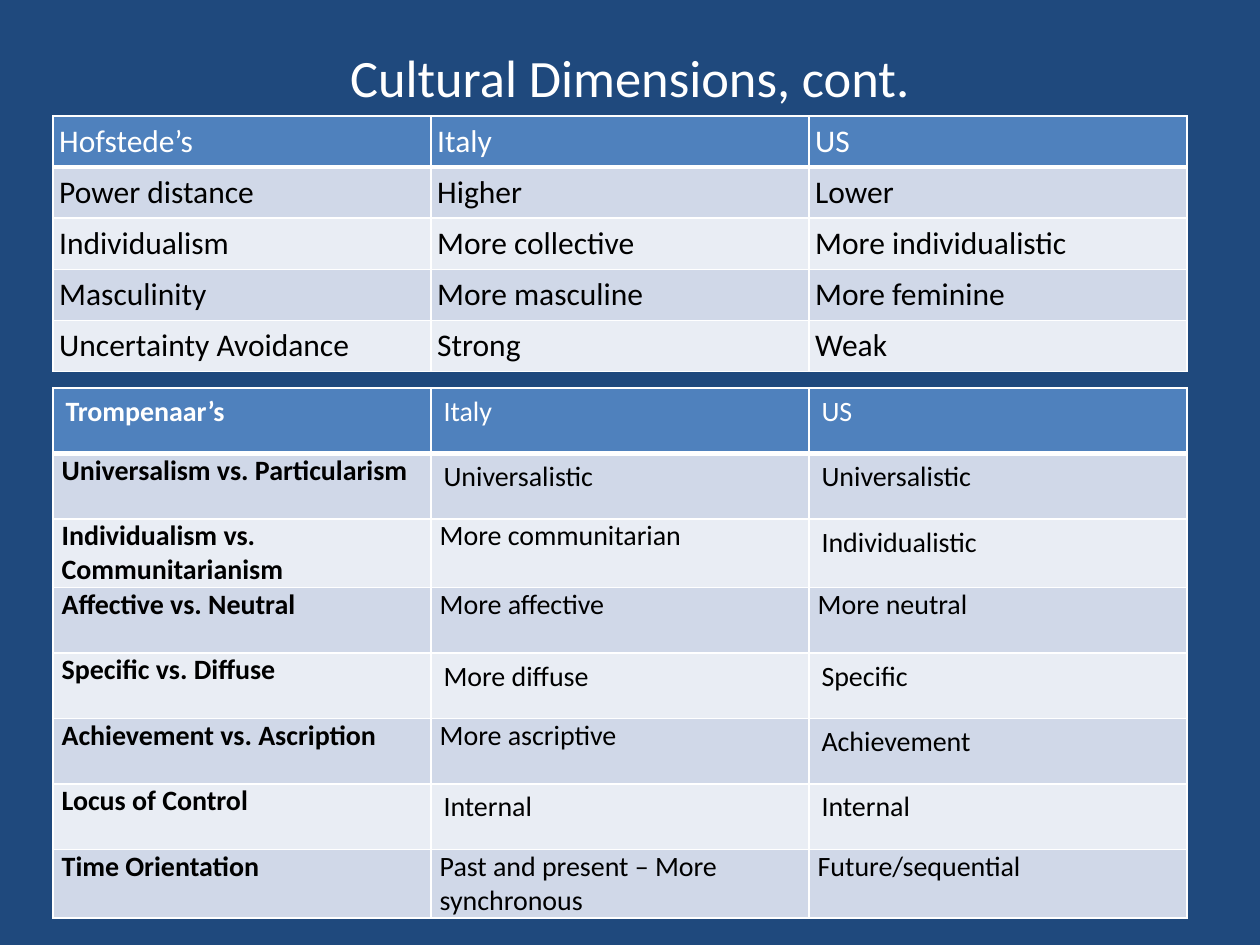
"""Build a slide with two tables comparing cultural dimensions of Italy and the US."""

from dataclasses import dataclass

from lxml.etree import SubElement
from pptx import Presentation
from pptx.dml.color import RGBColor
from pptx.enum.text import MSO_ANCHOR, PP_ALIGN
from pptx.oxml.ns import qn
from pptx.util import Pt

COLORS = {
    "background": "1F497D",
    "header": "4F81BD",
    "odd_row": "D0D8E8",
    "even_row": "E9EDF4",
    "light": "FFFFFF",
    "dark": "000000",
}
FONT = "Calibri"
TABLE_LEFT = 30.24
COLUMN_WIDTH = 216


@dataclass(frozen=True)
class Margins:
    horizontal: float
    vertical: float


@dataclass(frozen=True)
class Row:
    texts: tuple[str, ...]
    tight_cells: int = 0


@dataclass(frozen=True)
class Comparison:
    top: float
    row_height: float
    font_size: float
    bold_labels: bool
    margins: Margins
    rows: tuple[Row, ...]


TIGHT = Margins(5.04, 0)

COMPARISONS = (
    Comparison(66.24, 29.25, 18, False, Margins(3.6, 3.6), (
        Row(("Hofstede’s", "Italy", "US")),
        Row(("Power distance", "Higher", "Lower")),
        Row(("Individualism", "More collective", "More individualistic")),
        Row(("Masculinity", "More masculine", "More feminine")),
        Row(("Uncertainty Avoidance", "Strong", "Weak")),
    )),
    Comparison(221.76, 37.44, 16, True, Margins(7.2, 3.6), (
        Row(("Trompenaar’s", "Italy", "US")),
        Row(("Universalism vs. Particularism", "Universalistic", "Universalistic"), 1),
        Row(("Individualism vs. Communitarianism", "More communitarian", "Individualistic"), 2),
        Row(("Affective vs. Neutral", "More affective", "More neutral"), 3),
        Row(("Specific vs. Diffuse", "More diffuse", "Specific"), 1),
        Row(("Achievement vs. Ascription", "More ascriptive", "Achievement"), 2),
        Row(("Locus of Control", "Internal", "Internal"), 1),
        Row(("Time Orientation", "Past and present – More synchronous", "Future/sequential"), 3),
    )),
)


def color(name: str) -> RGBColor:
    return RGBColor.from_string(COLORS[name])


def format_paragraph(paragraph, size: float, color_name: str, bold: bool = False) -> None:
    values = {"name": FONT, "size": Pt(size), "bold": bold}
    for attribute, value in values.items():
        setattr(paragraph.font, attribute, value)
        for run in paragraph.runs:
            setattr(run.font, attribute, value)
    for run in paragraph.runs:
        run.font.color.rgb = color(color_name)


def add_borders(cell, bottom_width: float) -> None:
    properties = cell._tc.get_or_add_tcPr()
    widths = {"lnL": 1, "lnR": 1, "lnT": 1, "lnB": bottom_width}
    for side, width in widths.items():
        line = SubElement(properties, qn(f"a:{side}"), w=str(Pt(width)))
        fill = SubElement(line, qn("a:solidFill"))
        SubElement(fill, qn("a:srgbClr"), val=COLORS["light"])


def format_cell(cell, margins: Margins, fill_name: str) -> None:
    values = {
        "margin_left": Pt(margins.horizontal),
        "margin_right": Pt(margins.horizontal),
        "margin_top": Pt(margins.vertical),
        "margin_bottom": Pt(margins.vertical),
        "vertical_anchor": MSO_ANCHOR.TOP,
    }
    for attribute, value in values.items():
        setattr(cell, attribute, value)
    add_borders(cell, 3 if fill_name == "header" else 1)
    cell.fill.solid()
    cell.fill.fore_color.rgb = color(fill_name)


def add_comparison(slide, comparison: Comparison) -> None:
    row_count, column_count = len(comparison.rows), len(comparison.rows[0].texts)
    table = slide.shapes.add_table(
        row_count, column_count, Pt(TABLE_LEFT), Pt(comparison.top),
        Pt(COLUMN_WIDTH * column_count), Pt(comparison.row_height * row_count),
    ).table
    for column in table.columns:
        column.width = Pt(COLUMN_WIDTH)
    for row_index, row in enumerate(comparison.rows):
        table.rows[row_index].height = Pt(comparison.row_height)
        is_header = row_index == 0
        fill_name = "header" if is_header else "odd_row" if row_index % 2 else "even_row"
        for column_index, text in enumerate(row.texts):
            cell = table.cell(row_index, column_index)
            margins = TIGHT if column_index < row.tight_cells else comparison.margins
            format_cell(cell, margins, fill_name)
            cell.text = text
            format_paragraph(
                cell.text_frame.paragraphs[0], comparison.font_size,
                "light" if is_header else "dark",
                comparison.bold_labels and column_index == 0,
            )


def add_title(slide, text: str) -> None:
    title = slide.shapes.title
    bounds = {"left": 36, "top": 21.6, "width": 648, "height": 44.64}
    for attribute, value in bounds.items():
        setattr(title, attribute, Pt(value))
    title.text_frame.text = text
    title.text_frame.vertical_anchor = MSO_ANCHOR.MIDDLE
    paragraph = title.text_frame.paragraphs[0]
    paragraph.alignment = PP_ALIGN.CENTER
    format_paragraph(paragraph, 30, "light")


def main() -> None:
    presentation = Presentation()
    presentation.slide_width, presentation.slide_height = Pt(720), Pt(540)
    slide = presentation.slides.add_slide(presentation.slide_layouts.get_by_name("Title Only"))
    slide.background.fill.solid()
    slide.background.fill.fore_color.rgb = color("background")
    add_title(slide, "Cultural Dimensions, cont.")
    for comparison in COMPARISONS:
        add_comparison(slide, comparison)
    presentation.save("out.pptx")


if __name__ == "__main__":
    main()
